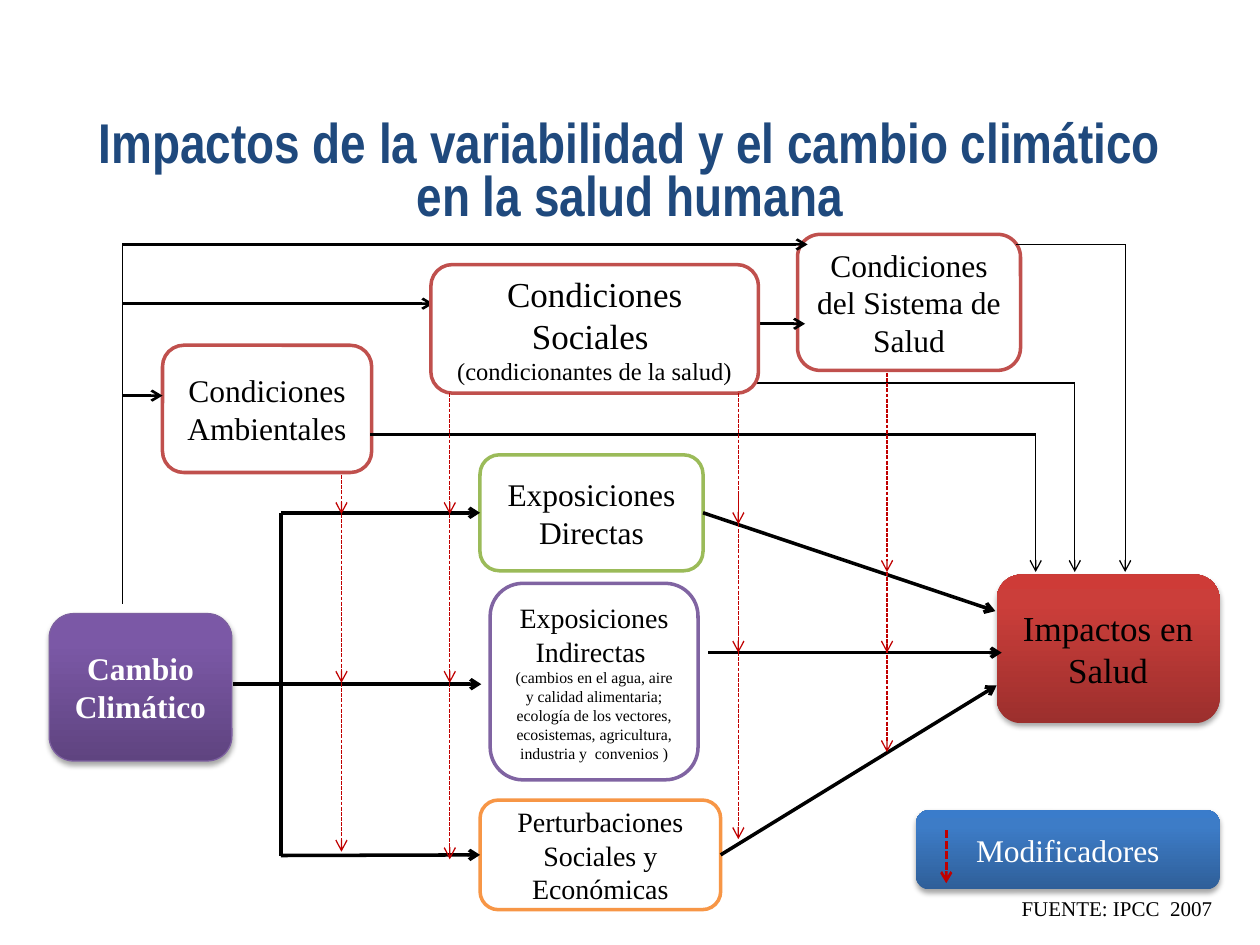
from dataclasses import dataclass
from lxml.etree import SubElement
from copy import deepcopy
from pptx import Presentation
from pptx.dml.color import RGBColor
from pptx.enum.dml import MSO_LINE
from pptx.enum.shapes import MSO_CONNECTOR as Connector, MSO_SHAPE as Shape
from pptx.enum.text import MSO_ANCHOR as Anchor, PP_ALIGN as Align
from pptx.oxml.ns import qn
from pptx.util import Inches, Pt

BLACK = RGBColor(0x00, 0x00, 0x00)
WHITE = RGBColor(0xFF, 0xFF, 0xFF)
NAVY = RGBColor(0x1F, 0x49, 0x7D)
BRICK = RGBColor(0xC0, 0x50, 0x4D)
GREEN = RGBColor(0x9B, 0xBB, 0x59)
ORANGE = RGBColor(0xF7, 0x96, 0x46)
VIOLET = RGBColor(0x80, 0x64, 0xA2)
VIOLET_EDGE = RGBColor(0x7D, 0x60, 0xA0)
DARK_RED = RGBColor(0xC0, 0x00, 0x00)
RED_BLEND = [RGBColor(0x9C, 0x2F, 0x2D), RGBColor(0xCB, 0x3E, 0x3A), RGBColor(0xCE, 0x3B, 0x37)]
VIOLET_BLEND = [RGBColor(0x5F, 0x44, 0x80), RGBColor(0x7B, 0x58, 0xA6), RGBColor(0x7C, 0x57, 0xA8)]
BLUE_BLEND = [RGBColor(0x2F, 0x5F, 0x99), RGBColor(0x3D, 0x7C, 0xC7), RGBColor(0x3A, 0x7C, 0xCB)]


def write(paragraph, text, size=18, font="Times New Roman", color=BLACK, bold=False, align=Align.CENTER):
    paragraph.alignment = align
    span = paragraph.add_run()
    span.text = text
    span.font.name, span.font.size, span.font.bold = font, Pt(size), bold
    span.font.color.rgb = color


def blend(fill, colors):
    fill.gradient()
    fill.gradient_angle = 90
    first = fill.gradient_stops[0]
    stops = fill._fill._gradFill.find(qn("a:gsLst"))
    stops.append(deepcopy(stops[0]))
    for stop, position, color in zip(fill.gradient_stops, (0, 0.8, 1), colors):
        stop.position = position
        stop.color.rgb = color


def cast_shadow(shape):
    effects = shape._element.spPr.find(qn("a:effectLst"))
    shadow = SubElement(effects, qn("a:outerShdw"), blurRad="40000", dist="23000", dir="5400000", rotWithShape="0")
    tint = SubElement(shadow, qn("a:srgbClr"), val="000000")
    SubElement(tint, qn("a:alpha"), val="35000")


@dataclass
class Diagram:
    """Draws the boxes, labels and links of a diagram on one slide."""

    page: object

    def label(self, place, text, line_spacing=None, inset=None, anchor=Anchor.TOP, **style):
        box = self.page.shapes.add_textbox(*map(Inches, place))
        frame = box.text_frame
        frame.word_wrap = True
        frame.vertical_anchor = anchor
        if inset is not None:
            frame.margin_left = frame.margin_right = frame.margin_top = frame.margin_bottom = Inches(inset)
        if line_spacing:
            frame.paragraphs[0].line_spacing = Pt(line_spacing)
        write(frame.paragraphs[0], text, **style)

    def box(self, place, text, edge=None, colors=None, edge_width=2, note=None, note_size=9, **style):
        box = self.page.shapes.add_shape(Shape.ROUNDED_RECTANGLE, *map(Inches, place))
        box.shadow.inherit = False
        if colors:
            blend(box.fill, colors)
            cast_shadow(box)
        else:
            box.fill.solid()
            box.fill.fore_color.rgb = WHITE
        if edge:
            box.line.color.rgb = edge
            box.line.width = Pt(edge_width)
        else:
            box.line.fill.background()
        frame = box.text_frame
        frame.word_wrap = True
        frame.vertical_anchor = Anchor.MIDDLE
        write(frame.paragraphs[0], text, **style)
        if note:
            write(frame.add_paragraph(), note, size=note_size)
        return box

    def link(self, x1, y1, x2, y2, width=2, color=BLACK, arrow=True, dashed=False, begin=None, end=None):
        line = self.page.shapes.add_connector(Connector.STRAIGHT, *map(Inches, (x1, y1, x2, y2)))
        if begin:
            line.begin_connect(begin, 3)
        if end:
            line.end_connect(end, 1)
        line.line.color.rgb = color
        line.line.width = Pt(width)
        if dashed:
            line.line.dash_style = MSO_LINE.SQUARE_DOT
        if arrow:
            SubElement(line.line._get_or_add_ln(), qn("a:tailEnd"), type="arrow")
        SubElement(line._element.spPr, qn("a:effectLst"))


def main():
    deck = Presentation()
    deck.slide_width, deck.slide_height = Inches(10), Inches(7.5)
    diagram = Diagram(deck.slides.add_slide(deck.slide_layouts[6]))

    diagram.label((0.59, 0.64, 8.82, 1.5), "Impactos de la variabilidad y el cambio climático en la salud humana",
                  line_spacing=30, inset=0, anchor=Anchor.MIDDLE,
                  size=32, font="Arial Narrow", color=NAVY, bold=True)
    diagram.label((7.44, 7.06, 2.28, 0.3), "FUENTE: IPCC  2007", size=12, align=Align.RIGHT)

    diagram.box((6.33, 1.86, 1.77, 1.08), "Condiciones del Sistema de Salud", BRICK)
    diagram.box((7.91, 4.56, 1.77, 1.18), "Impactos en Salud", colors=RED_BLEND, size=20)
    diagram.box((0.39, 4.87, 1.45, 1.17), "Cambio Climático", VIOLET_EDGE, VIOLET_BLEND,
                edge_width=0.75, color=WHITE, bold=True)
    disruptions = diagram.box((3.81, 6.35, 1.91, 0.87), "Perturbaciones Sociales y Económicas", ORANGE, size=16)
    direct = diagram.box((3.81, 3.61, 1.77, 0.92), "Exposiciones Directas", GREEN)
    diagram.box((1.29, 2.74, 1.66, 1.01), "Condiciones Ambientales", BRICK)
    diagram.box((7.27, 6.43, 2.41, 0.63), "Modificadores", colors=BLUE_BLEND, color=WHITE)
    diagram.box((3.89, 4.63, 1.65, 1.56), "Exposiciones Indirectas ", VIOLET, size=16,
                note="(cambios en el agua, aire y calidad alimentaria; ecología de los vectores, "
                     "ecosistemas, agricultura, industria y  convenios )")

    diagram.link(0.97, 1.94, 0.97, 4.79, width=0.75, arrow=False)
    for x1, x2, y in ((0.97, 6.41, 1.94), (0.97, 3.44, 2.41), (0.97, 1.29, 3.14), (5.94, 6.39, 2.57)):
        diagram.link(x1, y, x2, y, width=1.5)

    impact_routes = ((2.94, 8.22, 3.45, 1.5), (5.86, 8.53, 3.04, 1.5), (8.06, 8.93, 1.94, 0.75))
    for start, turn, y, width in impact_routes:
        diagram.link(start, y, turn, y, width=width, arrow=False)
        diagram.link(turn, y, turn, 4.54, width=0.75)

    diagram.link(1.85, 5.43, 3.82, 5.43)
    diagram.link(2.23, 4.07, 2.23, 6.79, arrow=False)
    diagram.link(2.23, 4.07, 3.81, 4.07, end=direct)
    diagram.link(2.23, 6.79, 3.81, 6.79, end=disruptions)
    diagram.link(5.58, 4.07, 7.9, 4.85, begin=direct)
    diagram.link(5.62, 5.18, 7.95, 5.18)
    diagram.link(5.72, 6.78, 7.91, 5.44, begin=disruptions)

    diagram.box((3.42, 2.1, 2.6, 1.02), "Condiciones Sociales ", BRICK, size=20,
                note="(condicionantes de la salud)", note_size=14)

    modifiers = {
        2.71: ((3.77, 4.08), (4.08, 5.42), (5.42, 6.76)),
        3.57: ((3.12, 4.08), (4.08, 5.42), (5.42, 6.82)),
        5.86: ((3.12, 4.16), (3.91, 5.18), (4.93, 6.66)),
        7.04: ((2.96, 4.54), (4.54, 5.18), (4.95, 5.97)),
    }
    for x, spans in modifiers.items():
        for top, bottom in spans:
            diagram.link(x, top, x, bottom, width=0.75, color=DARK_RED, dashed=True)
    diagram.link(7.51, 6.59, 7.51, 7.01, width=1.5, color=DARK_RED, dashed=True)

    deck.save("out.pptx")


if __name__ == "__main__":
    main()
